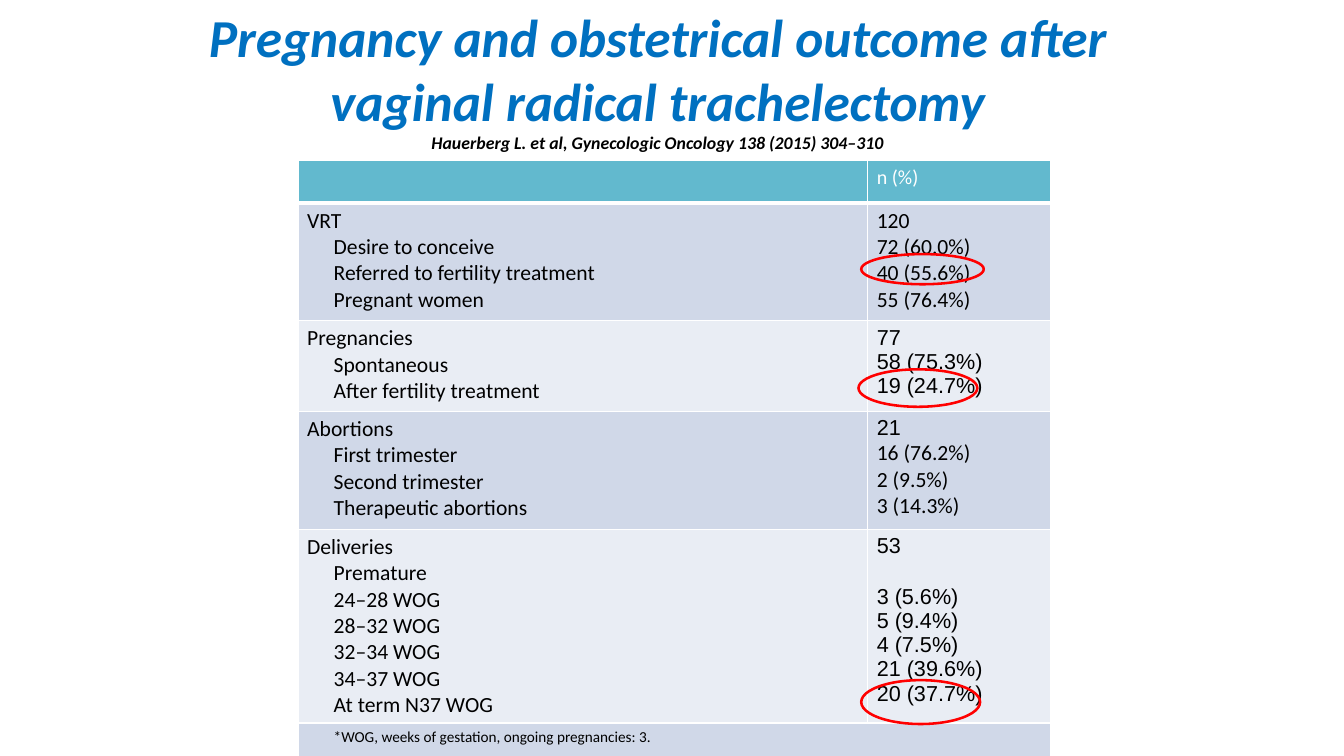
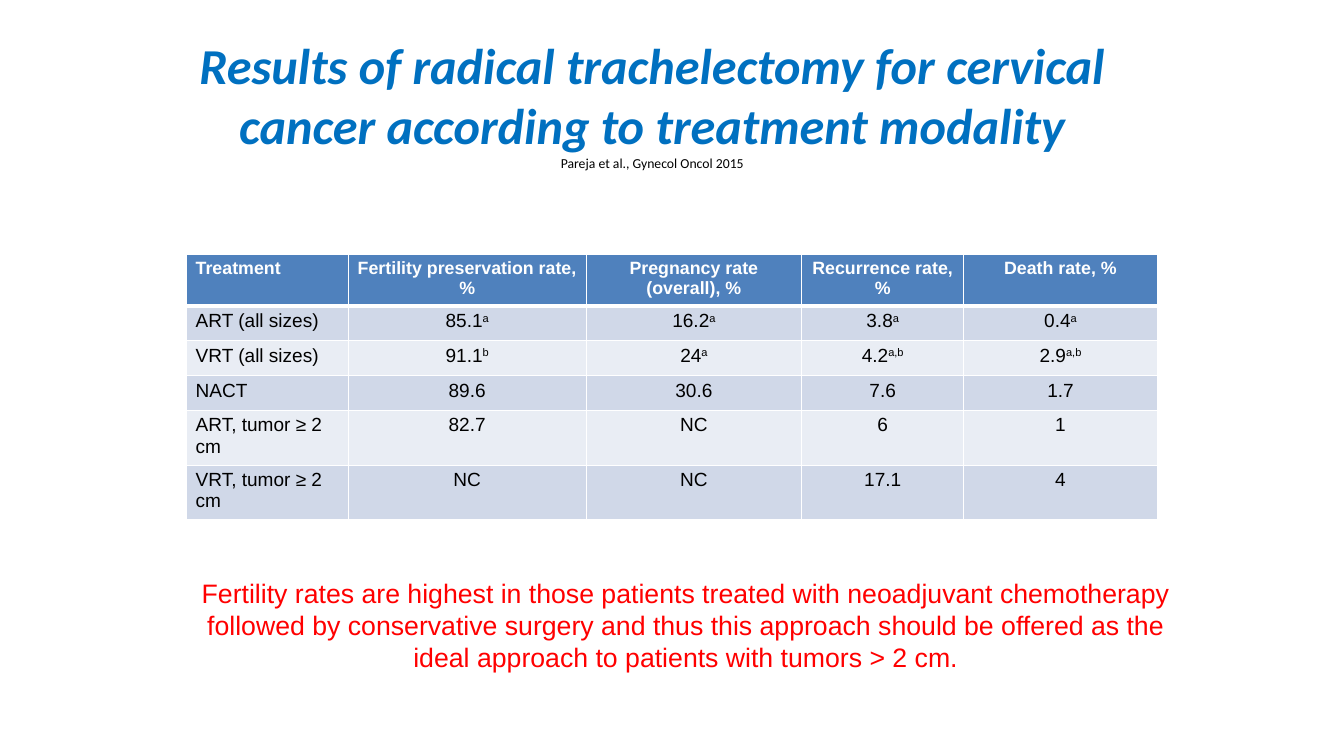
import collections
import copy

import lxml.etree
import pptx
import pptx.dml.color
import pptx.enum.shapes
import pptx.enum.text
import pptx.oxml.ns
import pptx.util

Inches = pptx.util.Inches
Pt = pptx.util.Pt
CENTER = pptx.enum.text.PP_ALIGN.CENTER
LEFT = pptx.enum.text.PP_ALIGN.LEFT

Line = collections.namedtuple("Line", "text font layout indent", defaults=({}, 0))

BLUE, RED, BLACK, WHITE = "0070C0", "FF0000", "000000", "FFFFFF"
BANDS = ("D0D8E8", "E9EDF4")
GAP = Pt(21)


def rgb(value):
    return pptx.dml.color.RGBColor.from_string(value)


def font(size, color=BLACK, name="Calibri", bold=False, italic=False):
    return {"size": Pt(size), "color": color, "name": name,
            "bold": bold, "italic": italic}


class Page:
    """Holds the shared style and the current slide, and adds elements to it."""

    def __init__(self, deck):
        self.deck = deck
        self.slide = None

    def start(self):
        self.slide = self.deck.slides.add_slide(self.deck.slide_layouts[5])

    def span(self, para, text, format):
        span = para.add_run()
        span.text = text
        for key, value in format.items():
            if key == "color":
                span.font.color.rgb = rgb(value)
            else:
                setattr(span.font, key, value)
        return span

    def lines(self, frame, lines):
        for index, line in enumerate(lines):
            para = frame.add_paragraph() if index else frame.paragraphs[0]
            for key, value in line.layout.items():
                setattr(para, key, value)
            if line.indent:
                para._p.get_or_add_pPr().set("marL", str(Inches(line.indent)))
            text, _, raised = line.text.partition("^")
            self.span(para, text, line.font)
            if raised:
                mark = self.span(para, raised, line.font)
                mark.font._element.set("baseline", "30000")

    def title(self, place, text, size, source, source_font):
        box = self.slide.shapes.title
        box.left, box.top, box.width, box.height = map(Inches, place)
        frame = box.text_frame
        margins = {"margin_left": 0.11, "margin_right": 0.11,
                   "margin_top": 0.06, "margin_bottom": 0.06}
        for key, value in margins.items():
            setattr(frame, key, Inches(value))
        frame.word_wrap = True
        frame.auto_size = pptx.enum.text.MSO_AUTO_SIZE.NONE
        frame.vertical_anchor = pptx.enum.text.MSO_ANCHOR.MIDDLE
        para = frame.paragraphs[0]
        para.alignment = CENTER
        span = self.span(para, text, font(size, BLUE, bold=True, italic=True))
        para.add_line_break()
        para._p[-1].append(copy.deepcopy(span._r.rPr))
        self.span(para, source, source_font)

    def border(self, cell, widths):
        properties = cell._tc.get_or_add_tcPr()
        for side, width in zip("LRTB", widths):
            edge = lxml.etree.SubElement(
                properties, pptx.oxml.ns.qn(f"a:ln{side}"), w=str(Pt(width)))
            fill = lxml.etree.SubElement(edge, pptx.oxml.ns.qn("a:solidFill"))
            lxml.etree.SubElement(fill, pptx.oxml.ns.qn("a:srgbClr"), val=WHITE)

    def table(self, place, columns, heights, rows, header_fill):
        table = self.slide.shapes.add_table(
            len(rows), len(columns), *map(Inches, place)).table
        for column, width in zip(table.columns, columns):
            column.width = Inches(width)
        for row, height in zip(table.rows, heights):
            row.height = Inches(height)
        for index, cells in enumerate(rows):
            for cell, lines in zip(table.rows[index].cells, cells):
                self.border(cell, (1, 1, 3 if index == 1 else 1, 1 if index else 3))
                cell.fill.solid()
                cell.fill.fore_color.rgb = rgb(
                    BANDS[(index - 1) % 2] if index else header_fill)
                self.lines(cell.text_frame, lines)
        return table

    def ring(self, *place):
        ring = self.slide.shapes.add_shape(
            pptx.enum.shapes.MSO_SHAPE.OVAL, *map(Inches, place))
        ring.shadow.inherit = False
        ring.fill.background()
        ring.line.color.rgb = rgb(RED)
        ring.line.width = Pt(2)

    def text(self, place, lines):
        box = self.slide.shapes.add_textbox(*map(Inches, place))
        box.text_frame.word_wrap = False
        box.text_frame.auto_size = pptx.enum.text.MSO_AUTO_SIZE.SHAPE_TO_FIT_TEXT
        self.lines(box.text_frame, lines)


def group_cells(total_name, name, entries):
    labels, values = [], []
    layout = {}
    for index, (label, value) in enumerate(entries):
        labels.append(Line(label, font(17), indent=0.29 if index else 0))
        if value:
            face = name if index else total_name
            values.append(Line(value, font(17, name=face), layout))
        layout = {} if value else {"space_before": GAP}
    return labels, values


def outcome_page(page):
    groups = [
        ("Calibri", "Calibri", [
            ("VRT", "120"), ("Desire to conceive", "72 (60.0%)"),
            ("Referred to fertility treatment", "40 (55.6%)"),
            ("Pregnant women", "55 (76.4%)")]),
        ("Arial", "Arial", [
            ("Pregnancies", "77"), ("Spontaneous", "58 (75.3%)"),
            ("After fertility treatment", "19 (24.7%)")]),
        ("Arial", "Calibri", [
            ("Abortions", "21"), ("First trimester", "16 (76.2%)"),
            ("Second trimester", "2 (9.5%)"),
            ("Therapeutic abortions", "3 (14.3%)")]),
        ("Arial", "Arial", [
            ("Deliveries", "53"), ("Premature", ""),
            ("24–28 WOG", "3 (5.6%)"), ("28–32 WOG", "5 (9.4%)"),
            ("32–34 WOG", "4 (7.5%)"), ("34–37 WOG", "21 (39.6%)"),
            ("At term N37 WOG", "20 (37.7%)")]),
    ]
    note = Line("*WOG, weeks of gestation, ongoing pregnancies: 3.",
                font(12), indent=0.29)
    rows = [([], [Line("n (%)", font(15.8, WHITE))])]
    rows += [group_cells(*group) for group in groups]
    rows.append(([note], []))
    page.start()
    page.title((2.15, 0.06, 10.09, 1.6),
               "Pregnancy and obstetrical outcome after vaginal radical trachelectomy",
               42, "Hauerberg L. et al, Gynecologic Oncology 138 (2015) 304–310",
               font(14, bold=True, italic=True))
    table = page.table((3.26, 1.76, 8.23, 6.51), (6.23, 2),
                       (0.46, 1.29, 0.99, 1.29, 2.1, 0.39), rows, "62B9CE")
    table.cell(5, 0).merge(table.cell(5, 1))
    page.ring(9.42, 2.78, 1.34, 0.33)
    page.ring(9.39, 4.04, 1.3, 0.41)
    page.ring(9.42, 7.44, 1.3, 0.48)


def modality_page(page):
    results = [
        ("Treatment", "Fertility preservation rate, %",
         "Pregnancy rate (overall), %", "Recurrence rate, %", "Death rate, %"),
        ("ART (all sizes)", "85.1^a", "16.2^a", "3.8^a", "0.4^a"),
        ("VRT (all sizes)", "91.1^b", "24^a", "4.2^a,b", "2.9^a,b"),
        ("NACT", "89.6", "30.6", "7.6", "1.7"),
        ("ART, tumor ≥ 2 cm", "82.7", "NC", "6", "1"),
        ("VRT, tumor ≥ 2 cm", "NC", "NC", "17.1", "4"),
    ]
    header, body = font(14, WHITE, "Arial", bold=True), font(15, name="Arial")
    rows = [[[Line(text, body if row else header,
                   {"alignment": CENTER if column else LEFT})]
             for column, text in enumerate(texts)]
            for row, texts in enumerate(results)]
    conclusion = (
        "Fertility rates are highest in those patients treated with neoadjuvant chemotherapy",
        "followed by conservative surgery and thus this approach should be offered as the",
        "ideal approach to patients with tumors > 2 cm.")
    page.start()
    page.title((1.87, 0.43, 10.53, 1.38),
               "Results of radical trachelectomy for cervical cancer "
               "according to treatment modality",
               39.6, "Pareja et al., Gynecol Oncol 2015", font(10.8))
    page.text((2.02, 6.26, 10.96, 1.16),
              [Line(text, font(21, RED, "Arial"), {"alignment": CENTER})
               for text in conclusion])
    page.table((2.04, 2.78, 10.62, 2.34), (1.77, 2.6, 2.36, 1.77, 2.12),
               [0.43] + [0.38] * 5, rows, "4F81BD")


def main():
    deck = pptx.Presentation()
    deck.slide_width, deck.slide_height = Inches(14.7), Inches(8.27)
    page = Page(deck)
    outcome_page(page)
    modality_page(page)
    deck.save("out.pptx")


if __name__ == "__main__":
    main()
